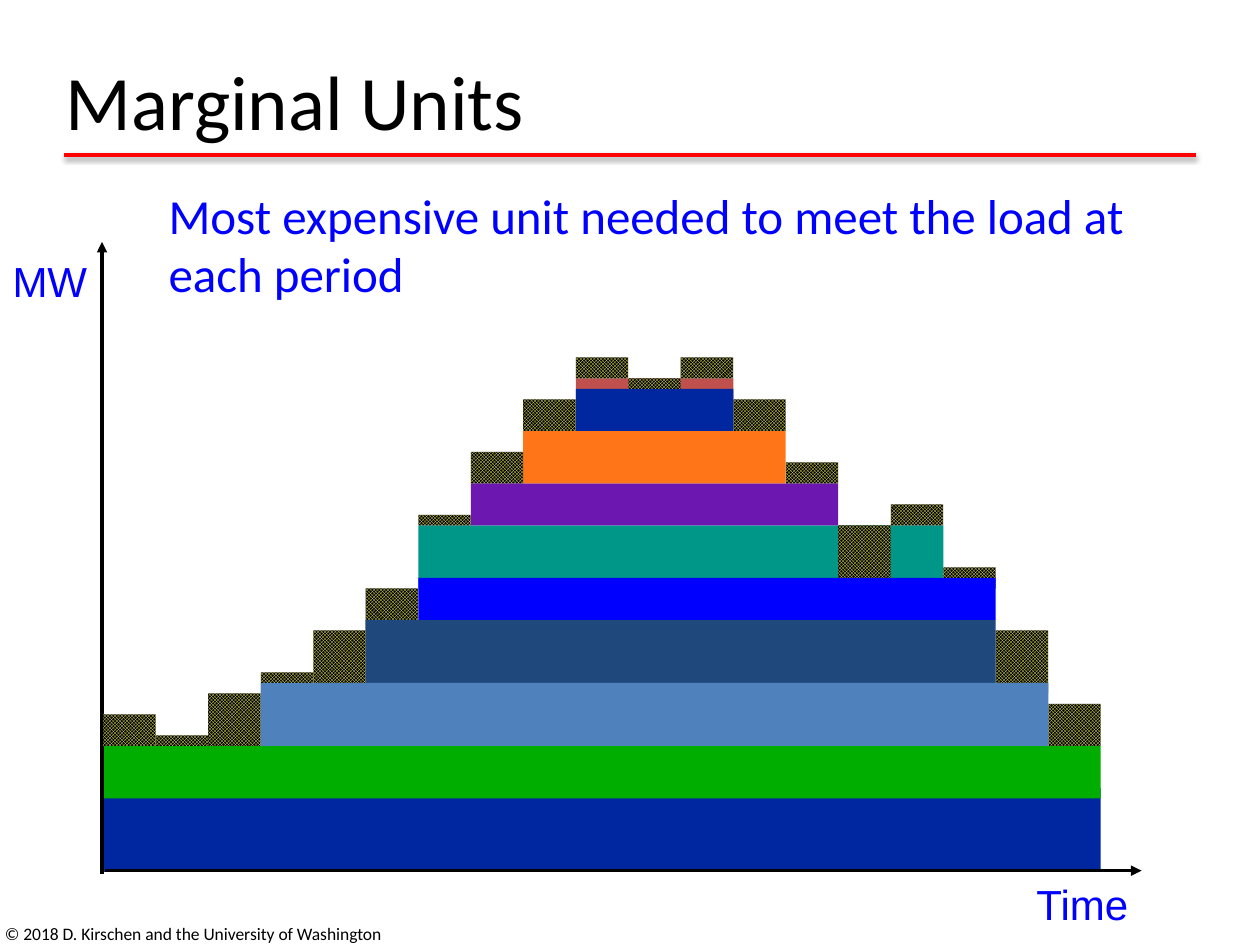
from typing import NamedTuple

from lxml import etree
from pptx import Presentation
from pptx import util as u
from pptx.dml.color import RGBColor
from pptx.enum import dml, shapes, text
from pptx.oxml import ns

COLORS = {
    "black": "000000", "red": "FF0000", "blue": "0000FF", "navy": "00279F",
    "green": "00AE00", "teal": "009688", "purple": "6C18B0",
    "orange": "FF7518", "brick": "C0504D", "slate": "1F497D",
    "steel": "4F81BD", "yellow": "FFFF66",
}
# Load grid: one column per period, rows counted upwards from the time axis
LEFT, BASE = 0.82, 6.92
COLUMN, ROW = 5 / 12, 1 / 12


class Unit(NamedTuple):
    color: str
    column: int
    periods: int
    bottom: int
    top: int


class Label(NamedTuple):
    words: str
    box: tuple[float, float, float, float]
    style: dict


class Axis(NamedTuple):
    start: tuple[float, float]
    end: tuple[float, float]


BASE_UNITS = [
    Unit("navy", 0, 19, 0, 8),
    Unit("green", 0, 19, 7, 12),
]
PEAK_UNITS = [
    Unit("teal", 6, 10, 27, 33),
    Unit("purple", 7, 7, 33, 37),
    Unit("orange", 8, 5, 37, 42),
    Unit("brick", 9, 3, 45, 47),
]
# Drawn after the marginal units, whose lower edges they overlap
COVERING_UNITS = [
    Unit("slate", 5, 12, 18, 24),
    Unit("blue", 6, 11, 24, 28),
    Unit("navy", 9, 3, 42, 46),
    Unit("steel", 3, 15, 12, 18),
]
# Bottom and top row of the marginal unit in each period
MARGINAL_ROWS = [
    (12, 15), (12, 13), (12, 17), (17, 19), (17, 23), (23, 27), (33, 34),
    (37, 40), (42, 45), (47, 49), (45, 47), (47, 49), (42, 45), (37, 39),
    (27, 33), (33, 35), (27, 29), (17, 23), (12, 16),
]
AXES = [
    Axis((0.81, 6.94), (0.81, 1.92)),
    Axis((0.83, 6.91), (9.06, 6.91)),
]
AXIS_STYLE = dict(size=24, font="Arial", color="blue",
                  align=text.PP_ALIGN.CENTER, wrap=False)
LABELS = [
    Label("© 2018 D. Kirschen and the University of Washington",
          (-0.06, 7.21, 3.88, 0.4),
          dict(size=10, anchor=text.MSO_ANCHOR.MIDDLE)),
    Label("MW", (0, 1.98, 0.79, 0.5), AXIS_STYLE),
    Label("Time", (8.12, 6.92, 0.94, 0.5), AXIS_STYLE),
    Label("Most expensive unit needed to meet the load at each period",
          (1.24, 1.42, 8.18, 1), dict(size=28, color="blue")),
]


def rgb(name: str) -> RGBColor:
    return RGBColor.from_string(COLORS[name])


def write(shape, words: str, *, size: float, font: str = "Calibri",
          color: str = "black", align=text.PP_ALIGN.LEFT,
          anchor=text.MSO_ANCHOR.TOP, wrap: bool = True) -> None:
    frame = shape.text_frame
    frame.auto_size = text.MSO_AUTO_SIZE.NONE
    frame.word_wrap = wrap
    frame.vertical_anchor = anchor
    paragraph = frame.paragraphs[0]
    paragraph.alignment = align
    run = paragraph.add_run()
    run.text = words
    run.font.size = u.Pt(size)
    run.font.name = font
    run.font.color.rgb = rgb(color)


def add_line(slide, start: tuple[float, float], end: tuple[float, float],
             color: str):
    """Draw a 2 pt line; return it with its empty effect list."""
    line = slide.shapes.add_connector(
        shapes.MSO_CONNECTOR.STRAIGHT, *map(u.Inches, start + end))
    line.line.color.rgb = rgb(color)
    line.line.width = u.Pt(2)
    effects = etree.SubElement(line._element.spPr, ns.qn("a:effectLst"))
    return line, effects


def add_title_rule(slide) -> None:
    _, effects = add_line(slide, (0.51, 1.23), (9.49, 1.23), "red")
    shadow = etree.SubElement(
        effects, ns.qn("a:outerShdw"), blurRad=str(u.Pt(3.1)),
        dist=str(u.Pt(1.6)), dir=str(90 * 60000), rotWithShape="0")
    tint = etree.SubElement(shadow, ns.qn("a:srgbClr"), val=COLORS["black"])
    etree.SubElement(tint, ns.qn("a:alpha"), val="38000")


def add_axis(slide, axis: Axis) -> None:
    line, _ = add_line(slide, axis.start, axis.end, "black")
    etree.SubElement(line.line._get_or_add_ln(), ns.qn("a:tailEnd"),
                     type="triangle")


def add_block(slide, column: int, periods: int, bottom: int, top: int):
    block = slide.shapes.add_shape(
        shapes.MSO_SHAPE.RECTANGLE,
        u.Inches(LEFT + column * COLUMN), u.Inches(BASE - top * ROW),
        u.Inches(periods * COLUMN), u.Inches((top - bottom) * ROW))
    block.shadow.inherit = False
    block.line.fill.background()
    return block


def add_units(slide, units: list[Unit]) -> None:
    for color, *cells in units:
        fill = add_block(slide, *cells).fill
        fill.solid()
        fill.fore_color.rgb = rgb(color)


def add_marginal_units(slide) -> None:
    for period, (bottom, top) in enumerate(MARGINAL_ROWS):
        fill = add_block(slide, period, 1, bottom, top).fill
        fill.patterned()
        fill.pattern = dml.MSO_PATTERN.SMALL_CHECKER_BOARD
        fill.fore_color.rgb = rgb("yellow")
        fill.back_color.rgb = rgb("black")


def main() -> None:
    deck = Presentation()
    deck.slide_width, deck.slide_height = u.Inches(10), u.Inches(7.5)
    slide = deck.slides.add_slide(deck.slide_layouts[5])

    title = slide.shapes.title
    title.left, title.top, title.width, title.height = map(
        u.Inches, (0.42, 0.36, 9, 0.87))
    write(title, "Marginal Units", size=44, anchor=text.MSO_ANCHOR.MIDDLE)
    add_title_rule(slide)

    add_units(slide, BASE_UNITS)
    for axis in AXES:
        add_axis(slide, axis)
    add_units(slide, PEAK_UNITS)
    add_marginal_units(slide)
    add_units(slide, COVERING_UNITS)

    for label in LABELS:
        box = slide.shapes.add_textbox(*map(u.Inches, label.box))
        write(box, label.words, **label.style)
    deck.save("out.pptx")


if __name__ == "__main__":
    main()
